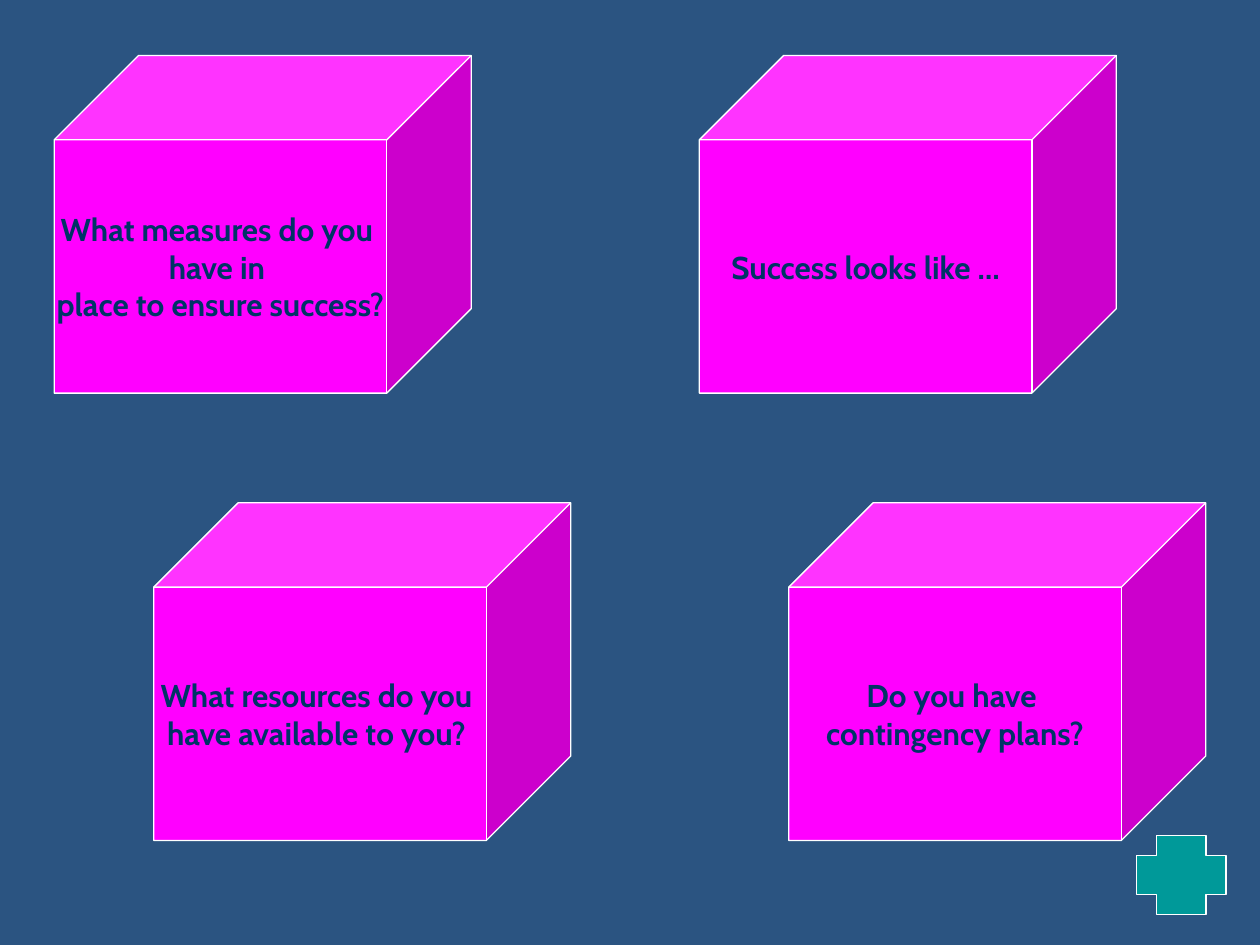
from dataclasses import dataclass
from pptx import Presentation
from pptx import util as u
from pptx.dml.color import RGBColor as Rgb
from pptx.enum import shapes, text


@dataclass(frozen=True)
class Theme:
    back: str = "2B5481"
    cube: str = "FF00FF"
    plus: str = "009999"
    edge: str = "FFFFFF"
    ink: str = "003366"
    face: str = "Cabin"
    size: float = 18
    rule: float = 0.75


@dataclass(frozen=True)
class Box:
    left: float
    top: float
    lines: tuple[str, ...]


THEME = Theme()
WIDE, HIGH = 3.31, 2.68
UPPER, LOWER = 0.44, 3.99
BOXES = (
    Box(0.43, UPPER, ("What measures do you ", "have in ", "place to ensure success?")),
    Box(1.22, LOWER, ("What resources do you ", "have available to you? ")),
    Box(6.26, LOWER, ("Do you have ", "contingency plans?")),
    Box(5.55, UPPER, ("Success looks like …",)),
)
FONT = {"name": THEME.face, "size": u.Pt(THEME.size), "bold": True}
FRAME = {"word_wrap": False, "vertical_anchor": text.MSO_ANCHOR.MIDDLE}


def apply(item: object, style: dict) -> None:
    for key, value in style.items():
        setattr(item, key, value)


def draw(slide, kind, left: float, top: float, wide: float, high: float, fill: str):
    shape = slide.shapes.add_shape(kind, *map(u.Inches, (left, top, wide, high)))
    shape.shadow.inherit = False
    shape.adjustments[0] = 0.25
    shape.fill.solid()
    shape.fill.fore_color.rgb = Rgb.from_string(fill)
    shape.line.color.rgb = Rgb.from_string(THEME.edge)
    shape.line.width = u.Pt(THEME.rule)
    return shape


def add_box(slide, box: Box) -> None:
    shape = draw(slide, shapes.MSO_SHAPE.CUBE, box.left, box.top, WIDE, HIGH, THEME.cube)
    frame = shape.text_frame
    apply(frame, FRAME)
    frame.text = "\n".join(box.lines)
    for para in frame.paragraphs:
        para.alignment = text.PP_ALIGN.CENTER
        for run in para.runs:
            apply(run.font, FONT)
            run.font.color.rgb = Rgb.from_string(THEME.ink)


def main() -> None:
    deck = Presentation()
    apply(deck, {"slide_width": u.Inches(10), "slide_height": u.Inches(7.5)})
    slide = deck.slides.add_slide(deck.slide_layouts[6])
    back = slide.background.fill
    back.solid()
    back.fore_color.rgb = Rgb.from_string(THEME.back)
    for box in BOXES:
        add_box(slide, box)
    draw(slide, shapes.MSO_SHAPE.CROSS, 9.02, 6.63, 0.71, 0.63, THEME.plus)
    deck.save("out.pptx")


if __name__ == "__main__":
    main()
